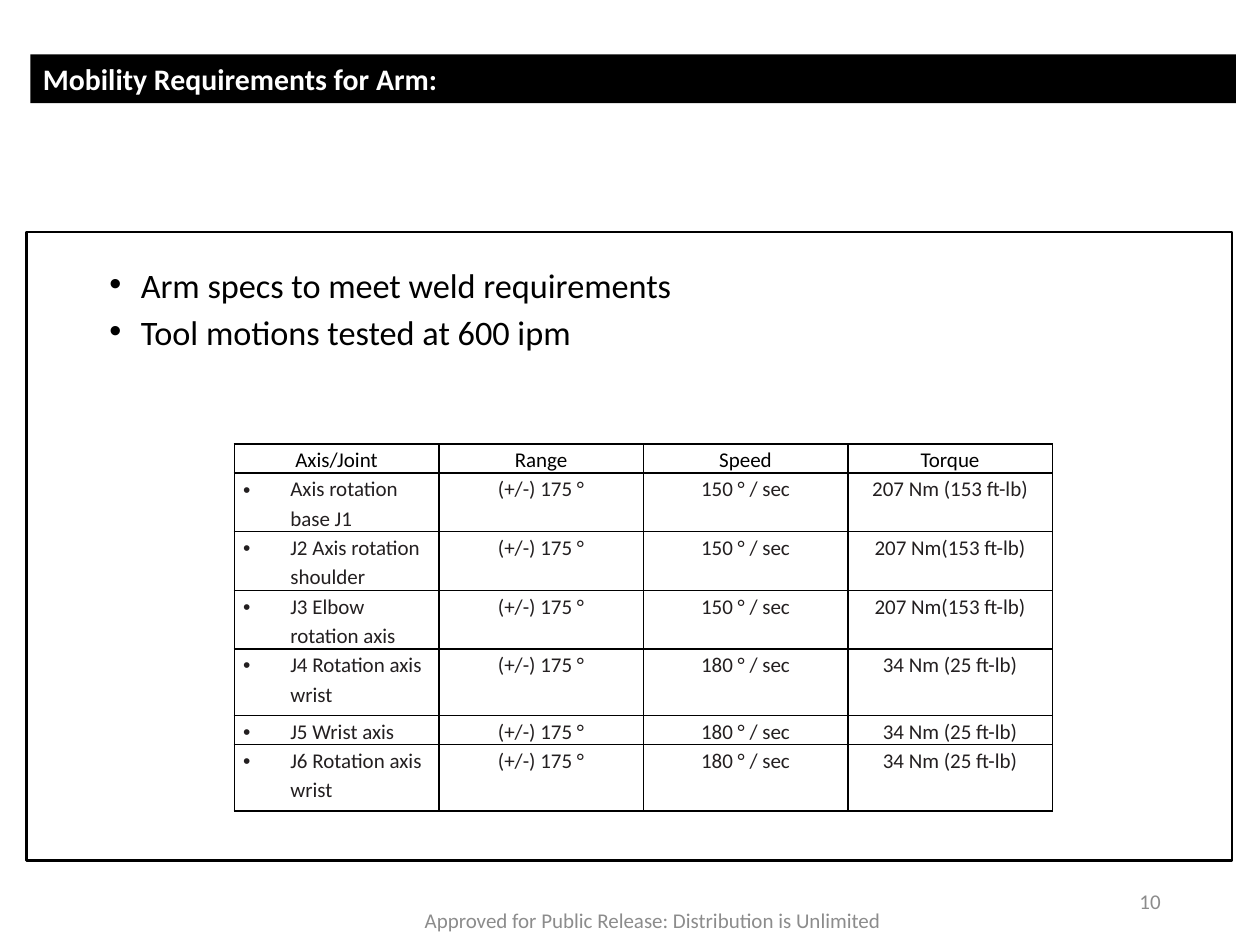
from dataclasses import dataclass

from lxml.etree import SubElement
from pptx import Presentation
from pptx.dml.color import RGBColor
from pptx.enum.shapes import MSO_SHAPE
from pptx.enum.text import MSO_ANCHOR, MSO_AUTO_SIZE, PP_ALIGN
from pptx.oxml import parse_xml
from pptx.oxml.ns import nsdecls, qn
from pptx.util import Pt

# Content
TITLE = "Mobility Requirements for Arm:"
BULLETS = ["Arm specs to meet weld requirements", "Tool motions tested at 600 ipm"]
HEADER = ("Axis/Joint", "Range", "Speed", "Torque")
JOINTS = [
    ("Axis rotation base J1", "(+/-) 175 °", "150 ° / sec", "207 Nm (153 ft-lb)"),
    ("J2 Axis rotation shoulder", "(+/-) 175 °", "150 ° / sec", "207 Nm(153 ft-lb)"),
    ("J3 Elbow rotation axis", "(+/-) 175 °", "150 ° / sec", "207 Nm(153 ft-lb)"),
    ("J4 Rotation axis wrist", "(+/-) 175 °", "180 ° / sec", "34 Nm (25 ft-lb)"),
    ("J5 Wrist axis", "(+/-) 175 °", "180 ° / sec", "34 Nm (25 ft-lb)"),
    ("J6 Rotation axis wrist", "(+/-) 175 °", "180 ° / sec", "34 Nm (25 ft-lb)"),
]
ROW_HEIGHTS = (16.8, 33.5, 33.5, 33.5, 38, 16.8, 38)
COLUMN_WIDTH = 116.85
PAGE_NUMBER = "10"
FOOTER = "Approved for Public Release: Distribution is Unlimited"


@dataclass(frozen=True)
class Theme:
    font: str = "Calibri"
    black: RGBColor = RGBColor(0, 0, 0)
    white: RGBColor = RGBColor(255, 255, 255)
    ink: RGBColor = RGBColor(0x23, 0x1F, 0x20)
    grey: RGBColor = RGBColor(0x8C, 0x8C, 0x8C)
    title_size: float = 17
    bullet_size: float = 19.6
    small_size: float = 12


THEME = Theme()


def style(para, size, color, align=PP_ALIGN.LEFT, bold=False):
    para.alignment = align
    para.font.name = THEME.font
    para.font.size = Pt(size)
    para.font.bold = bold
    para.font.color.rgb = color


def add_bullet(para, indent):
    properties = para._p.get_or_add_pPr()
    properties.set("marL", str(Pt(indent)))
    properties.set("indent", str(-Pt(indent)))
    font = parse_xml(f'<a:buFont {nsdecls("a")} typeface="Arial"/>')
    mark = parse_xml(f'<a:buChar {nsdecls("a")} char="•"/>')
    # Bullet marks precede the run defaults
    defaults = properties.find(qn("a:defRPr"))
    for item in (font, mark):
        if defaults is None:
            properties.append(item)
        else:
            defaults.addprevious(item)


def add_borders(cell):
    properties = cell._tc.get_or_add_tcPr()
    for index, side in enumerate(("lnL", "lnR", "lnT", "lnB")):
        line = parse_xml(f'<a:{side} {nsdecls("a")} w="{Pt(1)}"/>')
        fill = SubElement(line, qn("a:solidFill"))
        SubElement(fill, qn("a:srgbClr"), val=str(THEME.black))
        properties.insert(index, line)


def add_text(page, bounds, lines, anchor=MSO_ANCHOR.TOP):
    frame = page.shapes.add_textbox(*map(Pt, bounds)).text_frame
    frame.word_wrap = True
    frame.vertical_anchor = anchor
    frame.text = "\n".join(lines)
    return frame.paragraphs


def add_title(page):
    title = page.shapes.title
    title.left, title.top, title.width, title.height = map(Pt, (17.3, 31, 689, 28))
    title.fill.solid()
    title.fill.fore_color.rgb = THEME.black
    frame = title.text_frame
    frame.text = TITLE
    frame.auto_size = MSO_AUTO_SIZE.NONE
    frame.vertical_anchor = MSO_ANCHOR.MIDDLE
    style(frame.paragraphs[0], THEME.title_size, THEME.white, bold=True)


def add_frame(page):
    frame = page.shapes.add_shape(MSO_SHAPE.RECTANGLE, *map(Pt, (15.1, 132.5, 689, 359.3)))
    frame.shadow.inherit = False
    frame.fill.background()
    frame.line.color.rgb = THEME.black
    frame.line.width = Pt(1.5)


def add_joint_table(page):
    rows = [HEADER, *JOINTS]
    bounds = (133.9, 253.6, COLUMN_WIDTH * len(HEADER), sum(ROW_HEIGHTS))
    table = page.shapes.add_table(len(rows), len(HEADER), *map(Pt, bounds)).table
    table.first_row = table.horz_banding = False
    for column in table.columns:
        column.width = Pt(COLUMN_WIDTH)
    for r, (height, values) in enumerate(zip(ROW_HEIGHTS, rows)):
        table.rows[r].height = Pt(height)
        for c, value in enumerate(values):
            cell = table.cell(r, c)
            cell.text = value
            cell.margin_left = cell.margin_right = Pt(5)
            cell.margin_top = cell.margin_bottom = 0
            cell.fill.background()
            add_borders(cell)
            para = cell.text_frame.paragraphs[0]
            para.line_spacing = 1.15
            is_joint = r > 0 and c == 0
            style(para, THEME.small_size, THEME.ink if r else THEME.black,
                  PP_ALIGN.LEFT if is_joint else PP_ALIGN.CENTER)
            if is_joint:
                add_bullet(para, 27)


def main():
    deck = Presentation()
    deck.slide_width, deck.slide_height = Pt(720), Pt(540)
    page = deck.slides.add_slide(deck.slide_layouts[5])

    # Title bar and content frame
    add_title(page)
    add_frame(page)

    # Key points
    for para in add_text(page, (55.4, 154, 556.6, 51), BULLETS):
        para.line_spacing = 0.7
        para.space_before = Pt(10)
        style(para, THEME.bullet_size, THEME.black)
        add_bullet(para, 18)

    add_joint_table(page)

    # Page number and release note
    for text, bounds, align in (
        (PAGE_NUMBER, (508.3, 500.4, 162, 28.8), PP_ALIGN.RIGHT),
        (FOOTER, (229, 511.2, 288, 28.8), PP_ALIGN.CENTER),
    ):
        para = add_text(page, bounds, [text], MSO_ANCHOR.MIDDLE)[0]
        style(para, THEME.small_size, THEME.grey, align)

    deck.save("out.pptx")


if __name__ == "__main__":
    main()
